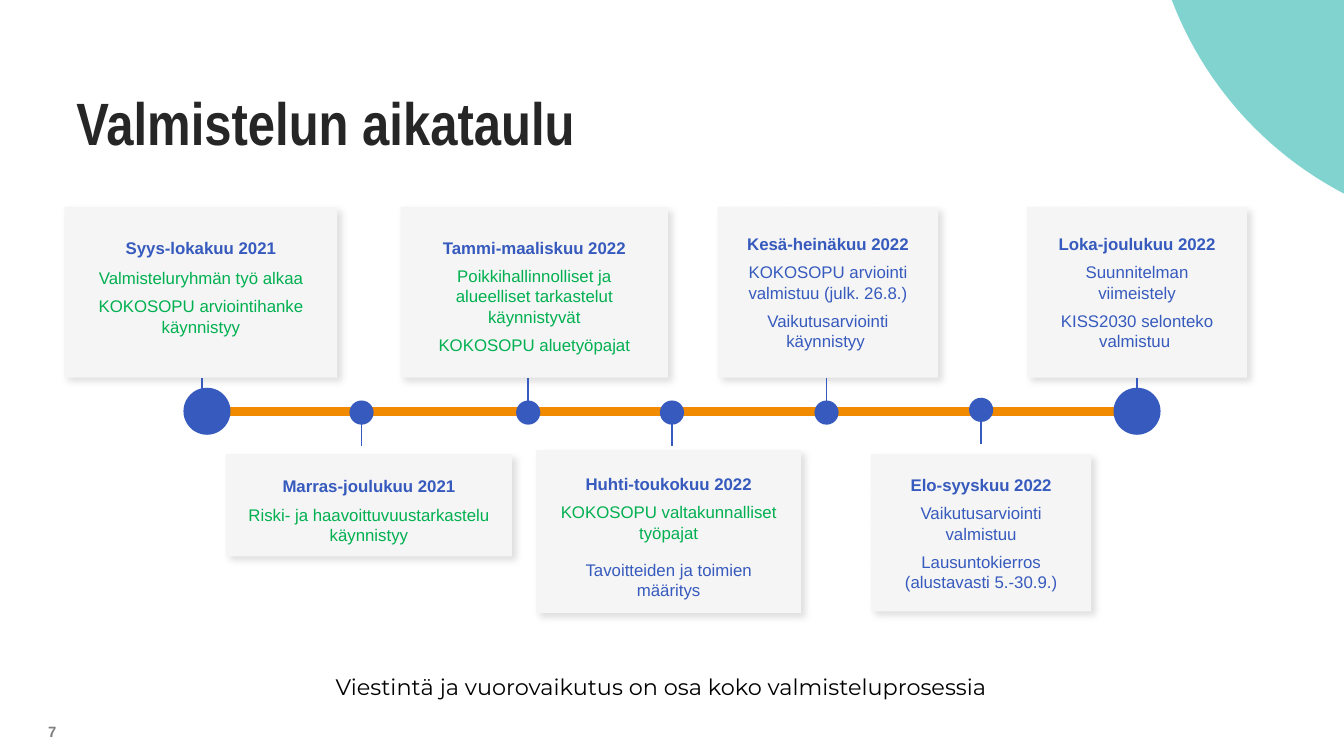
import math

from lxml import etree
from pptx import Presentation
from pptx import util as u
from pptx.dml.color import RGBColor
from pptx.enum import shapes, text
from pptx.oxml import ns

COLOURS = {
    "teal": "80D3CF", "title": "262626", "number": "808080", "orange": "F28A00",
    "card": "F5F5F5", "blue": "365ABD", "green": "00B050", "black": "000000",
}
TOP, MIDDLE, BOTTOM = (text.MSO_ANCHOR.TOP, text.MSO_ANCHOR.MIDDLE,
                       text.MSO_ANCHOR.BOTTOM)
LEFT, CENTER, RIGHT = text.PP_ALIGN.LEFT, text.PP_ALIGN.CENTER, text.PP_ALIGN.RIGHT

# Widescreen slide, 16:9
presentation = Presentation()
presentation.slide_width = u.Inches(10)
presentation.slide_height = u.Inches(10 * 9 / 16)
slide = presentation.slides.add_slide(presentation.slide_layouts[6])


def write(frame, words, size=9, font="Arial", colour="blue", bold=False,
          align=CENTER, before=0, after=0, spacing=1):
    """Fill the first paragraph of the frame, or append one if it is taken."""
    paragraph = frame.paragraphs[0]
    if paragraph.runs:
        paragraph = frame.add_paragraph()
    paragraph.alignment = align
    paragraph.space_before, paragraph.space_after = u.Pt(before), u.Pt(after)
    paragraph.line_spacing = spacing
    run = paragraph.add_run()
    run.text = words
    run.font.size, run.font.name, run.font.bold = u.Pt(size), font, bold
    run.font.color.rgb = RGBColor.from_string(COLOURS[colour])


def add_line(x1, y1, x2, y2, colour, width):
    line = slide.shapes.add_connector(
        shapes.MSO_CONNECTOR.STRAIGHT, *map(u.Inches, (x1, y1, x2, y2)))
    line.line.color.rgb = RGBColor.from_string(COLOURS[colour])
    line.line.width = u.Pt(width)
    etree.SubElement(line._element.spPr, ns.qn("a:effectLst"))


# Corner decoration: part of a circle centred beyond the top right corner
center_x, center_y, radius = 11.26, -0.97, 2.72
start = math.pi - math.asin(-center_y / radius)
end = math.acos((10 - center_x) / radius)
steps = 24
angles = [start + (end - start) * step / steps for step in range(steps + 1)]
arc = [(u.Inches(center_x + radius * math.cos(angle)),
        u.Inches(center_y + radius * math.sin(angle))) for angle in angles]
builder = slide.shapes.build_freeform(*arc[0])
builder.add_line_segments(arc[1:] + [(u.Inches(10), 0)], close=True)
corner = builder.convert_to_shape()
corner.fill.solid()
corner.fill.fore_color.rgb = RGBColor.from_string(COLOURS["teal"])
corner.line.fill.background()
corner.shadow.inherit = False

# Title, slide number and closing sentence
labels = [
    ((0.47, 0.26, 8.46, 0.96), BOTTOM, 0.1, "Valmistelun aikataulu",
     dict(size=32, font="Arial Narrow", colour="title", bold=True, align=LEFT)),
    ((0, 5.33, 0.44, 0.22), MIDDLE, 0.02, "7",
     dict(size=8, colour="number", bold=True, align=RIGHT)),
    ((2.4, 4.96, 5.14, 0.3), TOP, 0.1,
     "Viestintä ja vuorovaikutus on osa koko valmisteluprosessia",
     dict(size=12, font="Montserrat", colour="black", align=LEFT)),
]
for box, anchor, right_margin, words, style in labels:
    frame = slide.shapes.add_textbox(*map(u.Inches, box)).text_frame
    frame.word_wrap = True
    frame.vertical_anchor = anchor
    frame.margin_right = u.Inches(right_margin)
    write(frame, words, **style)

# Timeline axis
axis_y = 3.06
add_line(1.55, axis_y, 8.45, axis_y, "orange", 5)

# Stages: card box, anchor, heading and its line spacing, body paragraphs
GAP = 4.5
BOTH = dict(before=GAP, after=GAP)
stages = [
    ((0.48, 1.54, 2.03, 1.27), TOP, "Syys-lokakuu 2021", 1.5, [
        ("Valmisteluryhmän työ alkaa", "green", dict(spacing=1.5)),
        ("KOKOSOPU arviointihanke käynnistyy", "green", dict(before=GAP))]),
    ((1.68, 3.38, 2.13, 0.76), MIDDLE, "Marras-joulukuu 2021", 1.5, [
        ("Riski- ja haavoittuvuustarkastelu käynnistyy", "green", BOTH)]),
    ((2.98, 1.54, 1.99, 1.27), TOP, "Tammi-maaliskuu 2022", 1.5, [
        ("Poikkihallinnolliset ja alueelliset tarkastelut käynnistyvät",
         "green", BOTH),
        ("KOKOSOPU aluetyöpajat", "green", dict(after=GAP))]),
    ((3.99, 3.35, 1.97, 1.21), MIDDLE, "Huhti-toukokuu 2022", 1.5, [
        ("KOKOSOPU valtakunnalliset työpajat", "green", BOTH),
        ("Tavoitteiden ja toimien määritys", "blue", BOTH)]),
    ((5.34, 1.54, 1.64, 1.27), MIDDLE, "Kesä-heinäkuu 2022", 1, [
        ("KOKOSOPU arviointi valmistuu (julk. 26.8.)", "blue", dict(before=GAP)),
        ("Vaikutusarviointi käynnistyy ", "blue", dict(before=GAP))]),
    ((6.48, 3.38, 1.64, 1.17), TOP, "Elo-syyskuu 2022", 1, [
        ("Vaikutusarviointi valmistuu", "blue", BOTH),
        ("Lausuntokierros (alustavasti 5.-30.9.)", "blue", dict(after=GAP))]),
    ((7.64, 1.54, 1.64, 1.27), MIDDLE, "Loka-joulukuu 2022", 1, [
        ("Suunnitelman viimeistely", "blue", BOTH),
        ("KISS2030 selonteko valmistuu ", "blue", dict(after=GAP))]),
]
for box, anchor, heading, heading_spacing, body in stages:
    card = slide.shapes.add_shape(shapes.MSO_SHAPE.RECTANGLE, *map(u.Inches, box))
    card.fill.solid()
    card.fill.fore_color.rgb = RGBColor.from_string(COLOURS["card"])
    card.line.fill.background()
    card.shadow.inherit = False

    # Soft shadow towards the lower right
    shadow = etree.SubElement(
        card._element.spPr.find(ns.qn("a:effectLst")), ns.qn("a:outerShdw"),
        blurRad=str(u.Pt(4)), dist=str(u.Pt(3)), dir=str(45 * 60000),
        algn="tl", rotWithShape="0")
    shade = etree.SubElement(shadow, ns.qn("a:srgbClr"), val=COLOURS["black"])
    etree.SubElement(shade, ns.qn("a:alpha"), val="12000")

    frame = card.text_frame
    frame.word_wrap = True
    frame.vertical_anchor = anchor
    frame.margin_left = frame.margin_right = u.Inches(0.15)
    frame.margin_top = frame.margin_bottom = u.Inches(0.15)
    write(frame, heading, bold=True, spacing=heading_spacing)
    for words, colour, style in body:
        write(frame, words, colour=colour, **style)

# Markers: stem x, dot centre x, dot centre y, diameter; cards alternate sides
markers = [
    (1.5, 1.54, 3.06, 0.35), (2.69, 2.69, 3.07, 0.18), (3.93, 3.93, 3.07, 0.18),
    (5, 5, 3.07, 0.18), (6.15, 6.15, 3.07, 0.18), (7.3, 7.3, 3.05, 0.18),
    (8.46, 8.46, 3.06, 0.35),
]
for index, (stem_x, dot_x, dot_y, size) in enumerate(markers):
    stem_end = dot_y + 0.25 if index % 2 else 2.81
    add_line(stem_x, dot_y, stem_x, stem_end, "blue", 1)
    dot = slide.shapes.add_shape(
        shapes.MSO_SHAPE.OVAL, u.Inches(dot_x - size / 2),
        u.Inches(dot_y - size / 2), u.Inches(size), u.Inches(size))
    dot.fill.solid()
    dot.fill.fore_color.rgb = RGBColor.from_string(COLOURS["blue"])
    dot.line.fill.background()
    dot.shadow.inherit = False

presentation.save("out.pptx")
